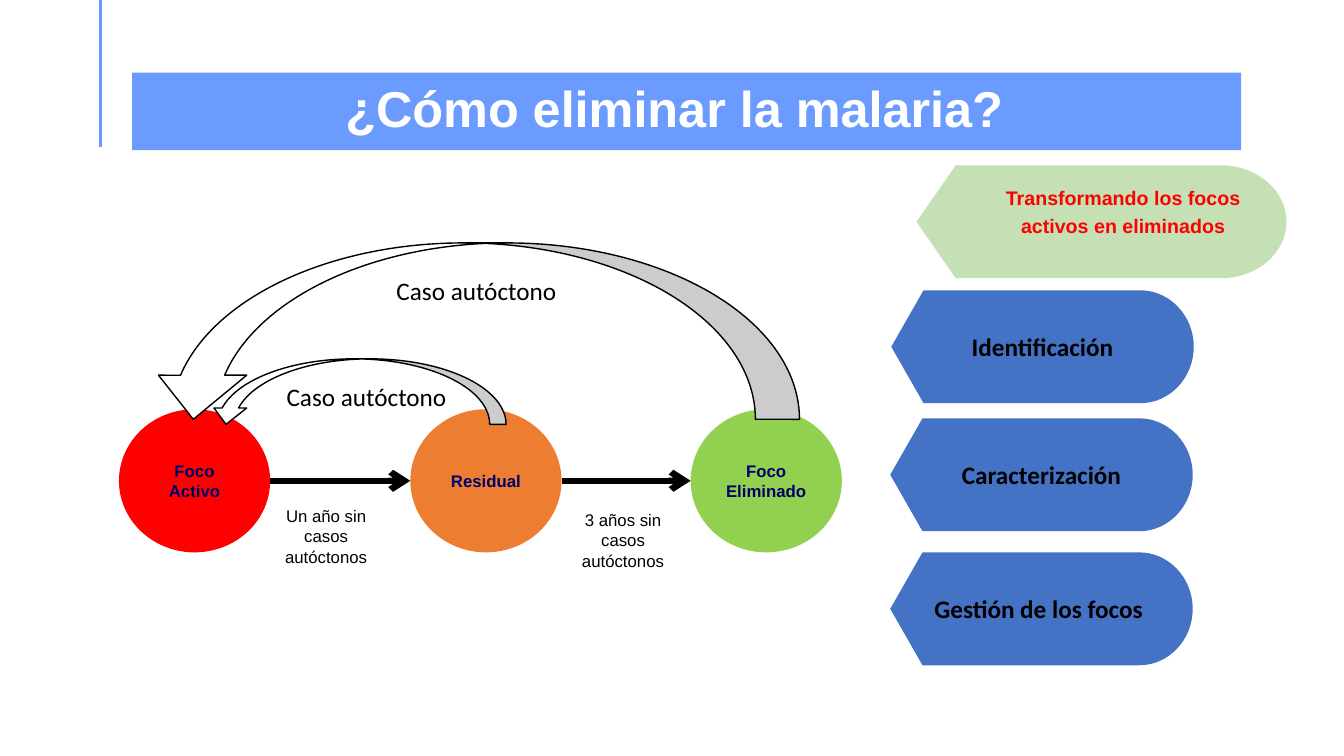
from lxml import etree
from pptx import Presentation
from pptx.dml.color import RGBColor
from pptx.enum.shapes import MSO_CONNECTOR, MSO_SHAPE
from pptx.enum.text import MSO_ANCHOR, PP_ALIGN
from pptx.oxml.ns import qn
from pptx.util import Pt

LINE = MSO_CONNECTOR.STRAIGHT
RECT, OVAL, ARC = MSO_SHAPE.RECTANGLE, MSO_SHAPE.OVAL, MSO_SHAPE.CURVED_DOWN_ARROW
TOP, MID, CENTER = MSO_ANCHOR.TOP, MSO_ANCHOR.MIDDLE, PP_ALIGN.CENTER
PX = 9144
INK = {"sky": "6B9BFF", "blue": "4472C4", "mint": "C5E0B4", "red": "FF0000",
       "orange": "ED7D31", "green": "92D050", "navy": "000066",
       "black": "000000", "white": "FFFFFF"}


def paint(shape, fill, edge=None):
    shape.shadow.inherit = False
    shape.fill.solid()
    shape.fill.fore_color.rgb = RGBColor.from_string(INK[fill])
    if edge:
        shape.line.color.rgb = RGBColor.from_string(INK[edge])
        shape.line.width = Pt(1)
    else:
        shape.line.fill.background()


def write(shape, text, size, font="Arial", ink="black", bold=False,
          anchor=TOP, wrap=True, gap=None):
    frame = shape.text_frame
    frame.word_wrap = wrap
    frame.vertical_anchor = anchor
    para = frame.paragraphs[0]
    para.alignment = CENTER
    para.line_spacing = gap
    run = para.add_run()
    run.text = text
    run.font.size = Pt(size)
    run.font.name = font
    run.font.bold = bold
    run.font.color.rgb = RGBColor.from_string(INK[ink])


deck = Presentation()
deck.slide_width, deck.slide_height = 1333 * PX, 750 * PX
slide = deck.slides.add_slide(deck.slide_layouts[6])
shapes = slide.shapes

band = shapes.add_shape(RECT, 131 * PX, 72 * PX, 1100 * PX, 77 * PX)
paint(band, "sky")

half, tall = 56, 112
bend = 0.55
tags = [
    (884, 288, 300, 32, 53, "blue", "Identificación"),
    (883, 415, 300, 32, 53, "blue", "Caracterización"),
    (883, 548, 300, 32, 53, "blue", "Gestión de los focos "),
    (909, 164, 367, 39, 65, "mint", ""),
]
for left, top, width, tip, cap, fill, text in tags:
    hub = width - cap
    pull = hub + bend * cap
    spots = [(hub, tall), (width, half), (hub, 0), (tip, 0), (0, half)]
    pen = shapes.build_freeform((left + tip) * PX, (top + tall) * PX)
    pen.add_line_segments([((left + x) * PX, (top + y) * PX) for x, y in spots])
    tag = pen.convert_to_shape()
    sides = list(tag._element.spPr.iter(qn("a:lnTo")))
    pulls = [[(pull, tall), (width, half + bend * half)],
             [(width, half - bend * half), (pull, 0)]]
    for side, pair in zip(sides[1:3], pulls):
        side.tag = qn("a:cubicBezTo")
        for spot, (x, y) in enumerate(pair):
            point = etree.Element(qn("a:pt"), x=str(round(x * PX)), y=str(round(y * PX)))
            side.insert(spot, point)
    paint(tag, fill)
    if text:
        write(tag, text, 18, font="Calibri", bold=True, anchor=MID, wrap=False)

for left, top, width, height, fill, text in [
    (118, 406, 150, 142, "red", "Foco Activo"),
    (407, 406, 150, 142, "orange", "Residual"),
    (685, 406, 150, 142, "green", "Foco Eliminado"),
]:
    focus = shapes.add_shape(OVAL, left * PX, top * PX, width * PX, height * PX)
    paint(focus, fill)
    write(focus, text, 12, ink="navy", bold=True, anchor=MID)

for x1, y1, x2, y2, ink, weight, head in [
    (100, 0, 100, 146, "sky", 2.25, False),
    (268, 477, 407, 477, "black", 4.5, True),
    (557, 477, 685, 477, "black", 4.5, True),
]:
    line = shapes.add_connector(LINE, x1 * PX, y1 * PX, x2 * PX, y2 * PX)
    line.line.color.rgb = RGBColor.from_string(INK[ink])
    line.line.width = Pt(weight)
    if head:
        etree.SubElement(line.line._get_or_add_ln(), qn("a:tailEnd"), type="arrow")
    etree.SubElement(line._element.spPr, qn("a:effectLst"))

for left, top, width, height in [(148, 241, 645, 175), (208, 356, 294, 65)]:
    arc = shapes.add_shape(ARC, left * PX, top * PX, width * PX, height * PX)
    paint(arc, "white", "black")
    arc._element.spPr.find(qn("a:xfrm")).set("flipH", "1")

heading = {"size": 36, "ink": "white", "bold": True, "anchor": MID, "gap": 0.9}
goal = {"size": 14, "ink": "red", "bold": True, "anchor": MID, "gap": 1.2}
case = {"size": 18, "font": "Calibri"}
note = {"size": 12}
for left, top, width, height, text, style in [
    (124, 72, 1090, 77, "¿Cómo eliminar la malaria?", heading),
    (978, 177, 272, 62, "Transformando los focos activos en eliminados", goal),
    (267, 497, 113, 71, "Un año sin casos autóctonos", note),
    (561, 501, 114, 71, "3 años sin casos autóctonos", note),
    (270, 373, 187, 30, "Caso autóctono", case),
    (379, 268, 187, 30, "Caso autóctono", case),
]:
    box = shapes.add_textbox(left * PX, top * PX, width * PX, height * PX)
    write(box, text, **style)

deck.save("out.pptx")
